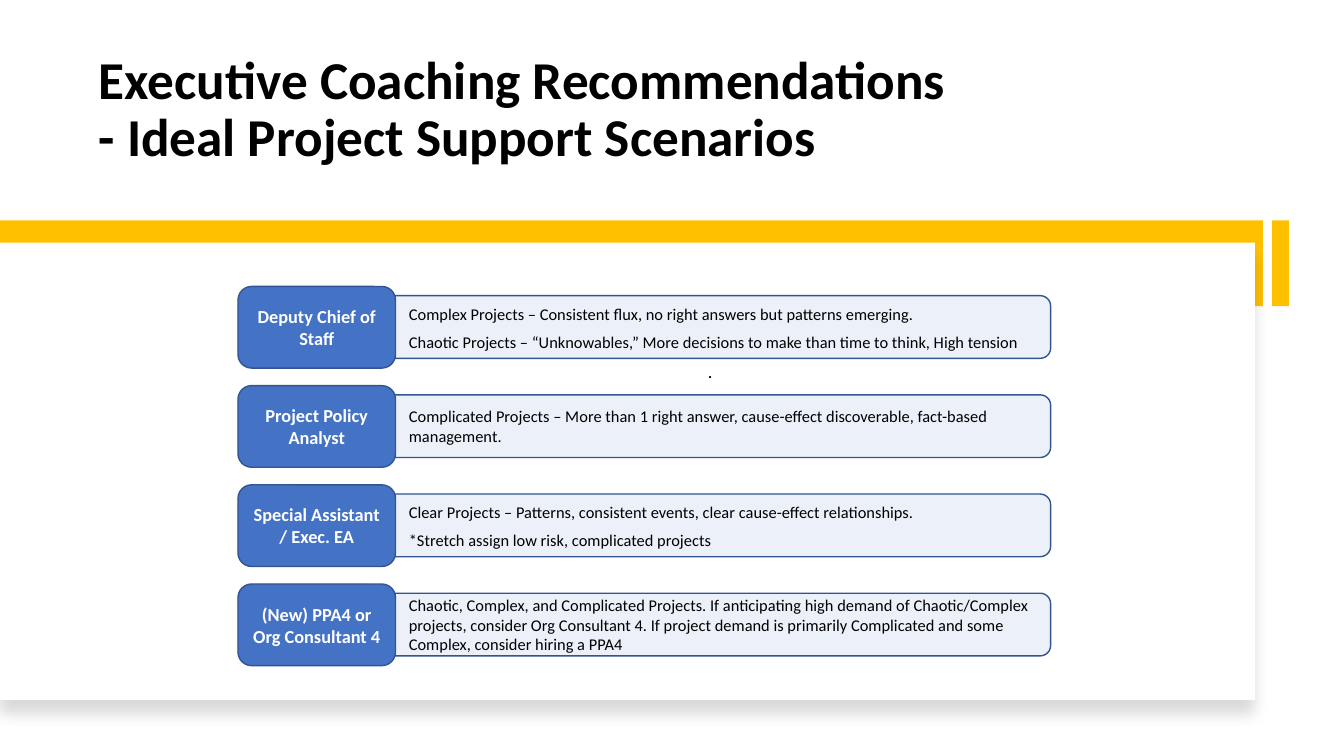
import pptx
import pptx.util
import pptx.dml.color
import pptx.enum.shapes
import pptx.enum.text
import pptx.oxml
import pptx.oxml.ns

Pt = pptx.util.Pt
RGBColor = pptx.dml.color.RGBColor
Shapes = pptx.enum.shapes.MSO_SHAPE
Align = pptx.enum.text.PP_ALIGN
Anchor = pptx.enum.text.MSO_ANCHOR

BLACK = RGBColor(0x00, 0x00, 0x00)
WHITE = RGBColor(0xFF, 0xFF, 0xFF)
GOLD = RGBColor(0xFF, 0xC0, 0x00)
BLUE = RGBColor(0x44, 0x72, 0xC4)
DARK_BLUE = RGBColor(0x32, 0x54, 0x91)
PALE_BLUE = RGBColor(0xEC, 0xF1, 0xF9)

TITLE_FONT = {"name": "Calibri", "size": Pt(38), "bold": True}
ROLE_FONT = {"name": "Calibri", "size": Pt(13.1), "bold": True}
PROJECT_FONT = {"name": "Calibri", "size": Pt(11.7), "bold": False}
DOT_FONT = {"name": "Calibri", "size": Pt(13.1), "bold": False}

ROW_PITCH = 70.85
ROLE_TOP = 204.6
BAR_TOP = 211.2
BAR_RIGHT = 750.5
TEXT_LEFT = 290
INSET = 7.2

ROWS = [
    ("Deputy Chief of Staff", 267, Anchor.TOP, [
        "Complex Projects – Consistent flux, no right answers but patterns emerging.",
        "Chaotic Projects – “Unknowables,” More decisions to make than time to think, High tension",
        ". "]),
    ("Project Policy Analyst", 267, Anchor.MIDDLE, [
        "Complicated Projects – More than 1 right answer, cause-effect discoverable, "
        "fact-based management."]),
    ("Special Assistant / Exec. EA", 257, Anchor.TOP, [
        "Clear Projects – Patterns, consistent events, clear cause-effect relationships.",
        "*Stretch assign low risk, complicated projects"]),
    ("(New) PPA4 or Org Consultant 4", 257, Anchor.MIDDLE, [
        "Chaotic, Complex, and Complicated Projects. If anticipating high demand of "
        "Chaotic/Complex projects, consider Org Consultant 4. If project demand is "
        "primarily Complicated and some Complex, consider hiring a PPA4"]),
]


def add_box(kind, left, top, width, height, fill, line=None):
    shape = slide.shapes.add_shape(kind, Pt(left), Pt(top), Pt(width), Pt(height))
    shape.shadow.inherit = False
    shape.fill.solid()
    shape.fill.fore_color.rgb = fill
    if line is None:
        shape.line.fill.background()
    else:
        shape.line.color.rgb = line
        shape.line.width = Pt(1)
    return shape


def write(shape, lines, anchor, fonts, color, alignments):
    frame = shape.text_frame
    frame.word_wrap = True
    frame.vertical_anchor = anchor
    frame.text = "\n".join(lines)
    for paragraph, font, alignment in zip(frame.paragraphs, fonts, alignments):
        paragraph.alignment = alignment
        paragraph.font.color.rgb = color
        for run in paragraph.runs:
            run.font.color.rgb = color
            for name, value in font.items():
                setattr(run.font, name, value)


presentation = pptx.Presentation()
presentation.slide_width = Pt(960)
presentation.slide_height = Pt(540)
slide = presentation.slides.add_slide(presentation.slide_layouts[5])

title = slide.shapes.title
title.left, title.top, title.width, title.height = Pt(63.4), Pt(30.2), Pt(727), Pt(93.6)
write(title, ["Executive Coaching Recommendations\v- Ideal Project Support Scenarios"],
      Anchor.BOTTOM, [TITLE_FONT], BLACK, [Align.LEFT])
title.text_frame.paragraphs[0].line_spacing = 0.9

add_box(Shapes.RECTANGLE, 908.7, 157.5, 12, 61.2, GOLD)
add_box(Shapes.RECTANGLE, 0, 157.5, 902, 61.2, GOLD)
panel = add_box(Shapes.RECTANGLE, 0, 173.4, 896.4, 326.6, WHITE)
effects = panel.fill._xPr.find(pptx.oxml.ns.qn("a:effectLst"))
effects.append(pptx.oxml.parse_xml(
    f'<a:outerShdw {pptx.oxml.ns.nsdecls("a")} blurRad="{Pt(11)}" dist="{Pt(10)}" '
    'dir="5400000" algn="t" rotWithShape="0"><a:srgbClr val="000000">'
    '<a:alpha val="15000"/></a:srgbClr></a:outerShdw>'))

for row, (role, bar_left, anchor, projects) in enumerate(ROWS):
    offset = row * ROW_PITCH
    bar = add_box(Shapes.ROUNDED_RECTANGLE, bar_left, BAR_TOP + offset,
                  BAR_RIGHT - bar_left, 44.8, PALE_BLUE, DARK_BLUE)
    fonts = [DOT_FONT if text == ". " else PROJECT_FONT for text in projects]
    alignments = [Align.CENTER if text == ". " else Align.LEFT for text in projects]
    write(bar, projects, anchor, fonts, BLACK, alignments)
    for paragraph in bar.text_frame.paragraphs:
        paragraph.space_after = Pt(6)
        if paragraph.alignment == Align.LEFT:
            indent = Pt(TEXT_LEFT - INSET - bar_left)
            paragraph._p.get_or_add_pPr().set("marL", str(indent))

    role_box = add_box(Shapes.ROUNDED_RECTANGLE, 170, ROLE_TOP + offset,
                       112.5, 58.3, BLUE, DARK_BLUE)
    write(role_box, [role], Anchor.MIDDLE, [ROLE_FONT], WHITE, [Align.CENTER])

presentation.save("out.pptx")
